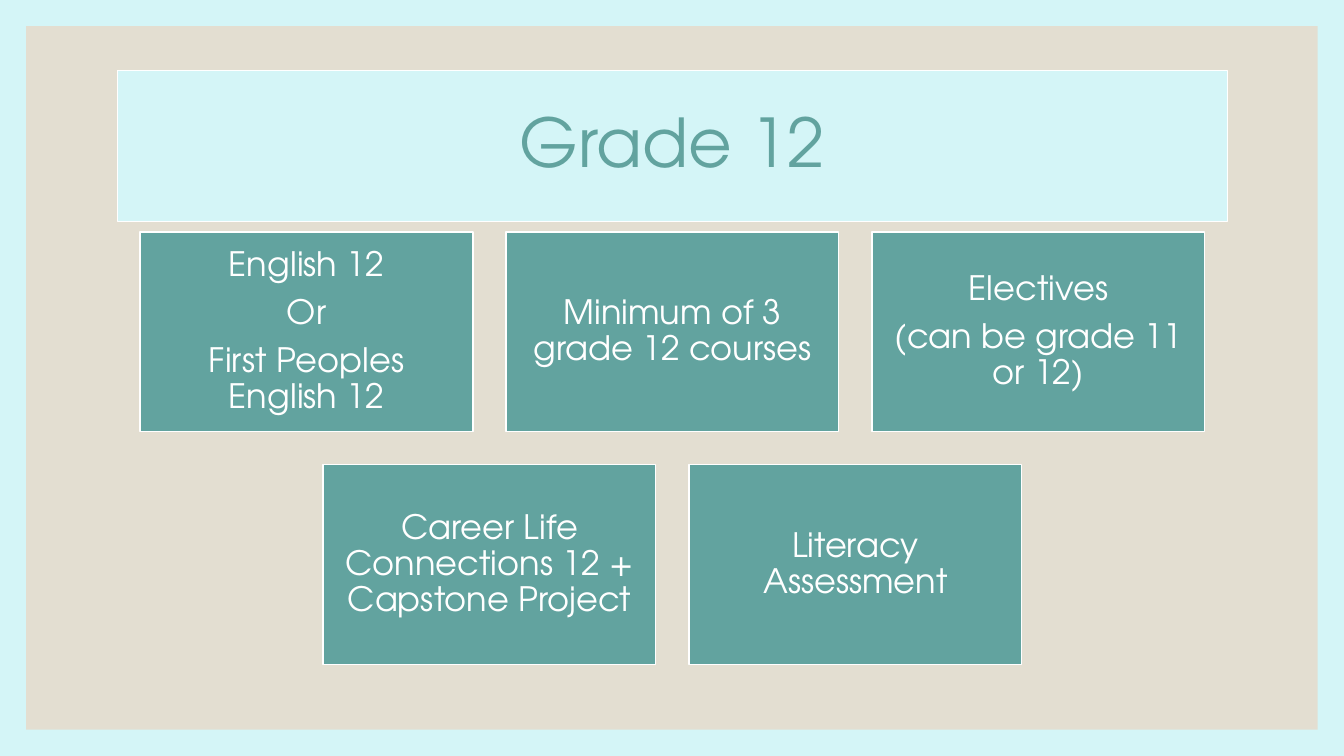
from pptx import Presentation
from pptx.dml.color import RGBColor
from pptx.enum.shapes import MSO_SHAPE
from pptx.enum.text import MSO_ANCHOR, PP_ALIGN
from pptx.util import Inches, Pt

COLORS = {
    "border": "D4F5F7",
    "panel": "E3DED1",
    "teal": "62A39F",
    "white": "FFFFFF",
}
FONT = "TeX Gyre Adventor"
SLIDE_WIDTH, SLIDE_HEIGHT = 13.33, 7.5

# Each inner list is a row of cards, each card a list of paragraphs
REQUIREMENTS = [
    [
        ["English 12", "Or", "First Peoples English 12"],
        ["Minimum of 3 grade 12 courses"],
        ["Electives", "(can be grade 11 or 12)"],
    ],
    [
        ["Career Life Connections 12 + Capstone Project"],
        ["Literacy Assessment"],
    ],
]


def rgb(name):
    return RGBColor.from_string(COLORS[name])


def set_all(target, values):
    for attribute, value in values.items():
        setattr(target, attribute, value)


def paint(box, fill, line_width):
    box.fill.solid()
    box.fill.fore_color.rgb = rgb(fill)
    box.line.color.rgb = rgb("white")
    box.line.width = Pt(line_width)


def write(box, paragraphs, size, color, space_after=0):
    frame = box.text_frame
    frame.text = "\n".join(paragraphs)
    set_all(frame, {"word_wrap": True, "vertical_anchor": MSO_ANCHOR.MIDDLE})
    for paragraph in frame.paragraphs:
        set_all(paragraph, {
            "alignment": PP_ALIGN.CENTER,
            "line_spacing": 0.9,
            "space_before": Pt(0),
            "space_after": Pt(space_after),
        })
        set_all(paragraph.font, {"size": Pt(size), "name": FONT})
        paragraph.font.color.rgb = rgb(color)


def add_backdrop(slide, margin):
    slide.background.fill.solid()
    slide.background.fill.fore_color.rgb = rgb("border")
    panel = slide.shapes.add_shape(
        MSO_SHAPE.RECTANGLE, Inches(margin), Inches(margin),
        Inches(SLIDE_WIDTH - 2 * margin), Inches(SLIDE_HEIGHT - 2 * margin))
    panel.shadow.inherit = False
    panel.fill.solid()
    panel.fill.fore_color.rgb = rgb("panel")
    panel.line.fill.background()
    # The panel lies behind the title
    slide.shapes.title.element.addprevious(panel.element)


def add_title(slide, left, top, width, height):
    title = slide.shapes.title
    set_all(title, {
        "left": Inches(left), "top": Inches(top),
        "width": Inches(width), "height": Inches(height),
    })
    paint(title, "border", 0.75)
    write(title, ["Grade 12"], 48, "teal")


def add_card(slide, paragraphs, left, top, width, height):
    card = slide.shapes.add_shape(
        MSO_SHAPE.RECTANGLE, Inches(left), Inches(top),
        Inches(width), Inches(height))
    card.shadow.inherit = False
    paint(card, "teal", 1)
    write(card, paragraphs, 24, "white", space_after=8.4)
    sides = ("left", "top", "right", "bottom")
    set_all(card.text_frame, {f"margin_{side}": Inches(0.1) for side in sides})


def add_requirements(slide, left, top, width, card_width, card_height, gap):
    for row, cards in enumerate(REQUIREMENTS):
        # Centre every row in the given width
        row_width = len(cards) * (card_width + gap) - gap
        row_left = left + (width - row_width) / 2
        for column, paragraphs in enumerate(cards):
            add_card(slide, paragraphs,
                     row_left + column * (card_width + gap),
                     top + row * (card_height + gap),
                     card_width, card_height)


def main():
    presentation = Presentation()
    presentation.slide_width = Inches(SLIDE_WIDTH)
    presentation.slide_height = Inches(SLIDE_HEIGHT)
    title_only = presentation.slide_layouts[5]
    slide = presentation.slides.add_slide(title_only)

    add_backdrop(slide, margin=0.26)
    add_title(slide, left=1.17, top=0.7, width=11, height=1.5)
    add_requirements(slide, left=1.17, top=2.3, width=11,
                     card_width=3.3, card_height=1.98, gap=0.33)
    presentation.save("out.pptx")


if __name__ == "__main__":
    main()
